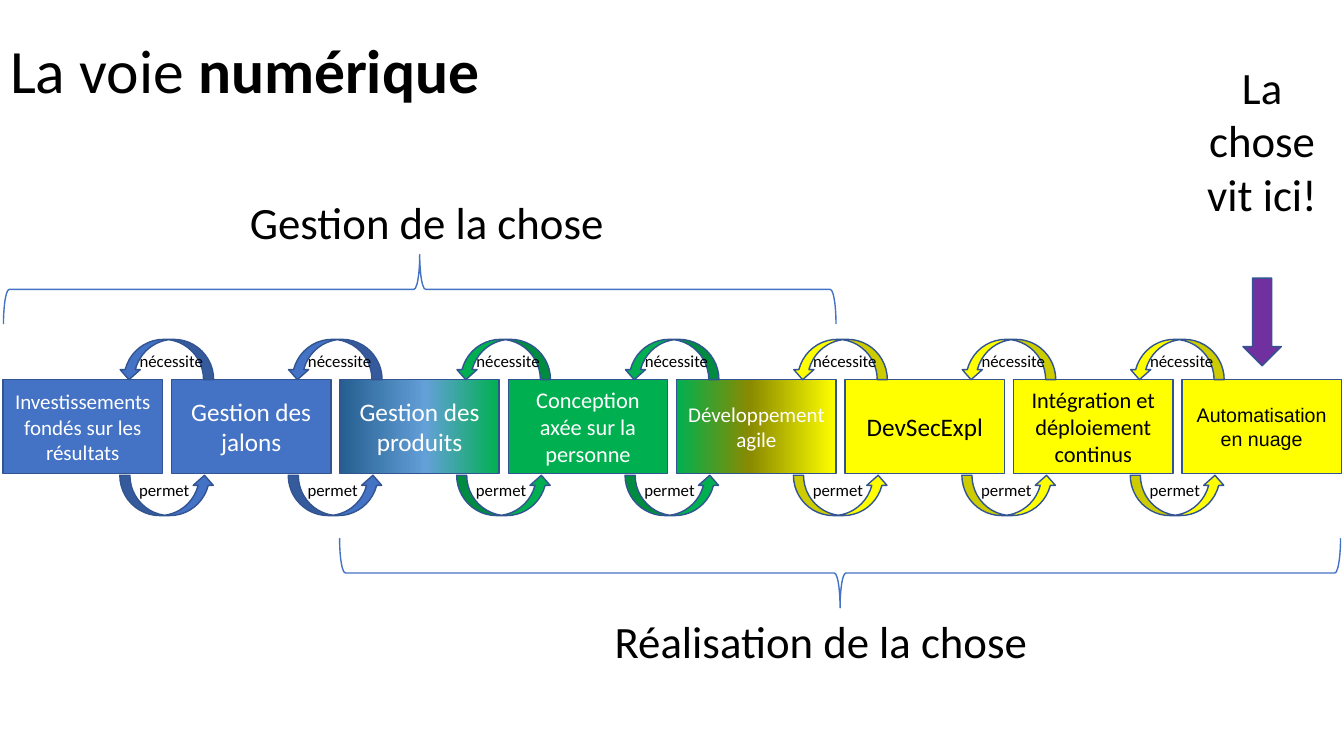
from copy import deepcopy
from pptx import Presentation
from pptx.dml.color import RGBColor
from pptx.enum.shapes import MSO_SHAPE
from pptx.enum.text import MSO_ANCHOR, MSO_AUTO_SIZE, PP_ALIGN
from pptx.util import Pt

BLUE, GREEN, YELLOW = "4472C4", "00B050", "FFFF00"
WHITE, BLACK, EDGE = "FFFFFF", "000000", "325491"
STEP = 120.3

deck = Presentation()
deck.slide_width, deck.slide_height = Pt(960), Pt(540)
slide = deck.slides.add_slide(deck.slide_layouts[5])


def draw(kind, x, y, w, h, fill=None, line=EDGE):
    """Add a shape; fill is a hex colour, a list of three gradient stops, or None."""
    shape = slide.shapes.add_shape(kind, Pt(x), Pt(y), Pt(w), Pt(h))
    shape.shadow.inherit = False
    shape.line.color.rgb = RGBColor.from_string(line)
    shape.line.width = Pt(1)
    if fill is None:
        shape.fill.background()
    elif isinstance(fill, str):
        shape.fill.solid()
        shape.fill.fore_color.rgb = RGBColor.from_string(fill)
    else:
        shape.fill.gradient()
        shape.fill.gradient_angle = 0
        first = shape._element.xpath(".//a:gs")[0]
        first.addnext(deepcopy(first))
        for stop, (place, color) in zip(shape.fill.gradient_stops, fill):
            stop.position = place
            stop.color.rgb = RGBColor.from_string(color)
    return shape


def write(shape, text, size, color=BLACK, font="Calibri", align=PP_ALIGN.LEFT, bold=None):
    """Add one run to the first paragraph of the shape."""
    para = shape.text_frame.paragraphs[0]
    para.alignment = align
    run = para.add_run()
    run.text = text
    run.font.size, run.font.name, run.font.bold = Pt(size), font, bold
    run.font.color.rgb = RGBColor.from_string(color)


# Title
title = slide.shapes.title
title.left, title.top, title.width, title.height = Pt(0), Pt(0), Pt(960), Pt(104.4)
title.text_frame.auto_size = MSO_AUTO_SIZE.NONE
title.text_frame.vertical_anchor = MSO_ANCHOR.MIDDLE
write(title, "La voie ", 44)
write(title, "numérique", 44, bold=True)
title.text_frame.paragraphs[0].line_spacing = 0.9

# Row of stages
fade = [(0, "255E91"), (0.54, "63A0D7"), (1, GREEN)]
blend = [(0, GREEN), (0.46, "8A8A00"), (1, YELLOW)]
stages = [
    ("Investissements fondés sur les résultats", 15, BLUE, WHITE, "Calibri"),
    ("Gestion des jalons", 18, BLUE, WHITE, "Calibri"),
    ("Gestion des produits", 18, fade, WHITE, "Calibri"),
    ("Conception axée sur la personne", 16, GREEN, WHITE, "Calibri"),
    ("Développement agile", 15, blend, WHITE, "Calibri"),
    ("DevSecExpl", 18, YELLOW, BLACK, "Calibri"),
    ("Intégration et déploiement continus", 16, YELLOW, BLACK, "Calibri"),
    ("Automatisation en nuage", 14, YELLOW, BLACK, "Arial"),
]
for i, (text, size, fill, color, font) in enumerate(stages):
    box = draw(MSO_SHAPE.RECTANGLE, 2.2 + i * STEP, 271.3, 113.8, 67, fill)
    box.text_frame.vertical_anchor = MSO_ANCHOR.MIDDLE
    write(box, text, size, color, font, PP_ALIGN.CENTER)

# Braces, turned about their centres
for x, y, h, turn in [(575.2, 51.8, 715, 90), (275, -90.7, 594.7, 270)]:
    brace = draw(MSO_SHAPE.RIGHT_BRACE, x, y, 49.7, h, line=BLUE)
    brace.rotation = turn

# Arrows between stages
tints = [BLUE, BLUE, GREEN, GREEN, YELLOW, YELLOW, YELLOW]
for i, tint in enumerate(tints):
    for x, y, turn in [(85.6, 339.5, 0), (84.9, 242.4, 180)]:
        arrow = draw(MSO_SHAPE.CURVED_UP_ARROW, x + i * STEP, y, 67.7, 28.8, tint)
        arrow.rotation = turn
draw(MSO_SHAPE.DOWN_ARROW, 887.8, 198.7, 27.4, 62.6, "7030A0")

# Labels
labels = [
    ("Gestion de la chose", 32, 171.4, 135.4, 270, 46),
    ("Réalisation de la chose", 32, 432, 434.9, 312.5, 46),
    ("La chose vit ici!", 32, 841, 38.9, 121, 123.8),
]
for i in range(len(tints)):
    labels.append(("permet", 12, 92.3 + i * STEP, 338.8, 52.6, 21.6))
    labels.append(("nécessite", 12, 92.6 + i * STEP, 247.3, 61.9, 21.6))
for text, size, x, y, w, h in labels:
    note = slide.shapes.add_textbox(Pt(x), Pt(y), Pt(w), Pt(h))
    tall = h > 100
    note.text_frame.word_wrap = tall
    note.text_frame.auto_size = MSO_AUTO_SIZE.SHAPE_TO_FIT_TEXT
    write(note, text, size, align=PP_ALIGN.CENTER if tall else PP_ALIGN.LEFT)

deck.save("out.pptx")
